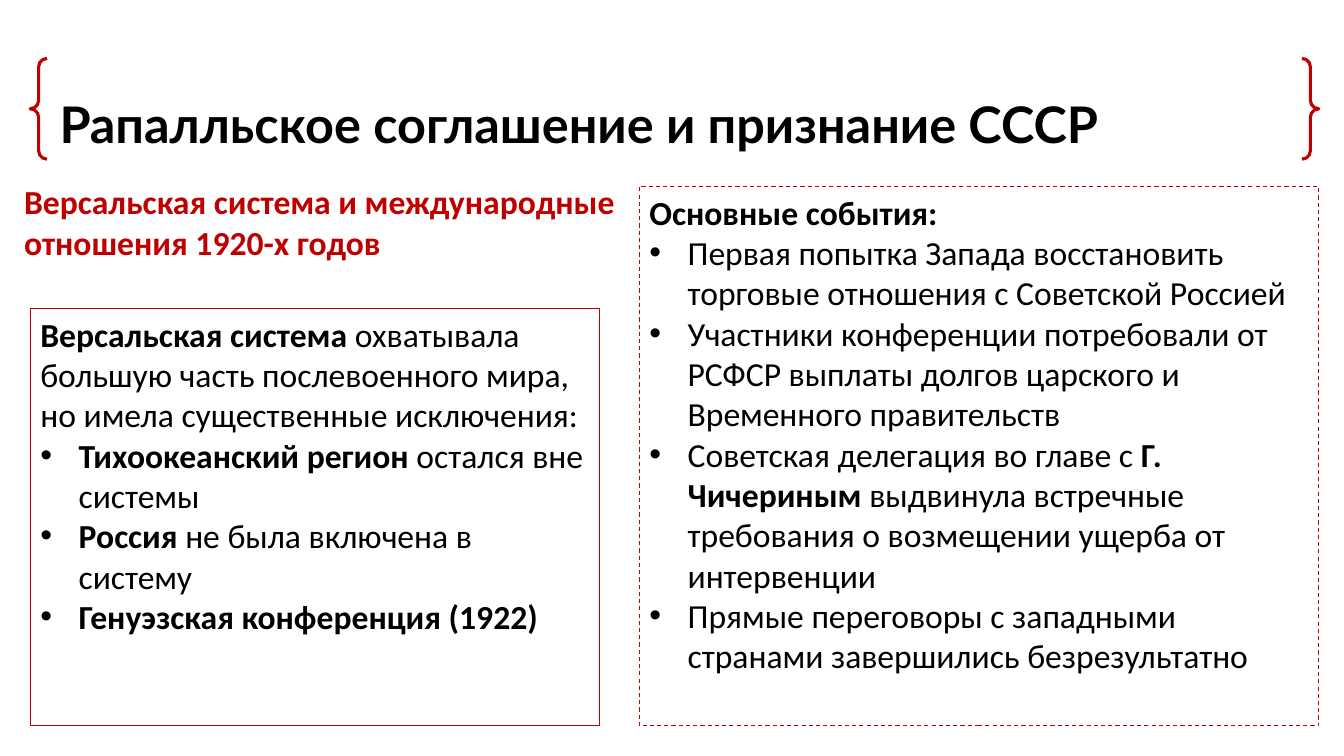
from pptx import Presentation
from pptx.dml.color import RGBColor as Rgb
from pptx.enum.dml import MSO_LINE as Dash
from pptx.enum.shapes import MSO_SHAPE as Shape
from pptx.enum.text import MSO_ANCHOR as Anchor, MSO_AUTO_SIZE as Fit, PP_ALIGN as Align
from pptx.oxml.ns import qn
from pptx.util import Inches, Pt
from lxml.etree import SubElement as Sub

# Content: text between asterisks is bold; the first line of a panel has no bullet
TITLE = "*Рапалльское соглашение и признание СССР*"
TOPIC = "*Версальская система и международные отношения 1920-х годов*"
SYSTEM = [
    "*Версальская система* охватывала большую часть послевоенного мира, "
    "но имела существенные исключения:",
    "*Тихоокеанский регион* остался вне системы",
    "*Россия* не была включена в систему",
    "*Генуэзская конференция (1922)*",
]
EVENTS = [
    "*Основные события:*",
    "Первая попытка Запада восстановить торговые отношения с Советской Россией",
    "Участники конференции потребовали от РСФСР выплаты долгов царского и "
    "Временного правительств",
    "Советская делегация во главе с *Г. Чичериным* выдвинула встречные "
    "требования о возмещении ущерба от интервенции",
    "Прямые переговоры с западными странами завершились безрезультатно",
]

THEME = {
    "red": Rgb(0xC0, 0x00, 0x00), "black": Rgb(0, 0, 0),
    "head": "Lato", "body": "Calibri",
    "big": Pt(36), "text": Pt(24), "thin": Pt(0.75), "thick": Pt(2.25),
}

# Layout
LEFT, RIGHT, BASE = 0.3, 13.08, 7.2
SPLIT, INDENT = 6.34, 0.38


def place(item, left, top, right, base):
    item.left, item.top = Inches(left), Inches(top)
    item.width, item.height = Inches(right - left), Inches(base - top)


def outline(item, width, dash=None):
    item.line.color.rgb = THEME["red"]
    item.line.width = width
    if dash:
        item.line.dash_style = dash


def write(item, lines, font="body", size="text", color="black",
          anchor=Anchor.TOP, space=1.0, bullets=False):
    frame = item.text_frame
    frame.word_wrap = True
    frame.auto_size = Fit.NONE
    frame.vertical_anchor = anchor
    for row, line in enumerate(lines):
        para = frame.add_paragraph() if row else frame.paragraphs[0]
        para.alignment = Align.LEFT
        para.line_spacing = space
        para.space_before = para.space_after = Pt(0)
        props = para._p.get_or_add_pPr()
        if bullets and row:
            props.set("marL", str(Inches(INDENT)))
            props.set("indent", str(-Inches(INDENT)))
            Sub(props, qn("a:buFont"), typeface="Arial")
            Sub(props, qn("a:buChar"), char="•")
        else:
            props.set("marL", "0")
            props.set("indent", "0")
            Sub(props, qn("a:buNone"))
        for part, text in enumerate(line.split("*")):
            if text:
                run = para.add_run()
                run.text = text
                run.font.name = THEME[font]
                run.font.size = THEME[size]
                run.font.color.rgb = THEME[color]
                run.font.bold = part % 2 == 1


def main():
    deck = Presentation()
    deck.slide_width, deck.slide_height = Inches(13.33), Inches(7.5)
    slide = deck.slides.add_slide(deck.slide_layouts[3])
    title, system, events = slide.placeholders

    # Title and its braces
    place(title, 0.49, 0.09, RIGHT, 1.58)
    write(title, [TITLE], font="head", size="big", anchor=Anchor.BOTTOM, space=0.9)
    brace = slide.shapes.add_shape(Shape.DOUBLE_BRACE, 0, 0, 0, 0)
    place(brace, LEFT, 0.58, RIGHT, 1.58)
    brace.shadow.inherit = False
    brace.fill.background()
    outline(brace, THEME["thick"])

    # Topic heading
    topic = slide.shapes.add_textbox(0, 0, 0, 0)
    place(topic, 0.14, 1.75, 6.73, 3.06)
    write(topic, [TOPIC], color="red")

    # Outlined panels
    for panel, lines, left, top, right, dash in (
        (events, EVENTS, SPLIT, 1.85, RIGHT, Dash.DASH),
        (system, SYSTEM, LEFT, 3.06, 5.95, None),
    ):
        place(panel, left, top, right, BASE)
        outline(panel, THEME["thin"], dash)
        write(panel, lines, bullets=True)

    deck.save("out.pptx")


if __name__ == "__main__":
    main()
